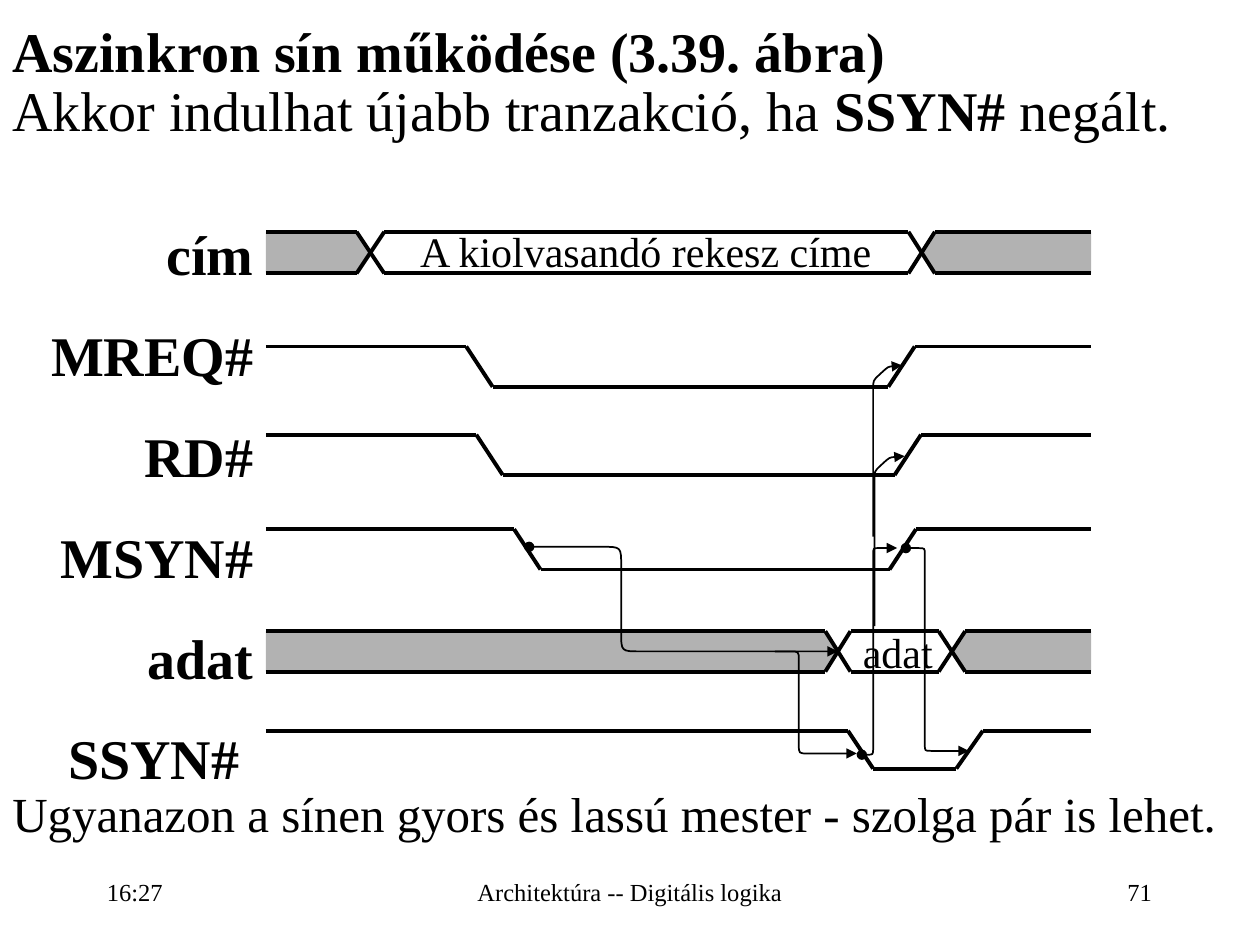
import math
import pptx
import pptx.util
import pptx.dml.color
import pptx.enum.shapes
import pptx.enum.text
import pptx.oxml
import pptx.oxml.ns

Inches, Pt = pptx.util.Inches, pptx.util.Pt
ALIGN = pptx.enum.text.PP_ALIGN
ANCHOR = pptx.enum.text.MSO_ANCHOR
BLACK = pptx.dml.color.RGBColor(0x00, 0x00, 0x00)
GREY = pptx.dml.color.RGBColor(0xB2, 0xB2, 0xB2)
FONT = "Times New Roman"

# The diagram runs between these two edges.
LEFT, RIGHT = 2.11, 8.66

# Each paragraph is a list of (text, bold) runs.
HEADING = [
    [("Aszinkron sín működése (3.39. ábra)", True)],
    [("Akkor indulhat újabb tranzakció, ha ", False), ("SSYN#", True), (" negált.", False)],
]
REMARK = [[("Ugyanazon a sínen gyors és lassú mester - szolga pár is lehet.", False)]]
SIGNALS = ["cím", "MREQ#", "RD#", "MSYN#", "adat", "SSYN# "]

# text, left, top, width, height, alignment
FOOTERS = [
    ("16:27", 0.75, 6.81, 2.07, 0.54, ALIGN.LEFT),
    ("Architektúra -- Digitális logika", 3.42, 6.83, 3.16, 0.49, ALIGN.CENTER),
    ("71", 7.17, 6.83, 2.07, 0.49, ALIGN.RIGHT),
]
# text, left, top, width
BUS_VALUES = [
    ("A kiolvasandó rekesz címe", 2.95, 1.74, 4.35),
    ("adat", 6.70, 4.92, 0.85),
]

# high level, low level, fall start, fall end, rise start, rise end
CONTROL_LINES = [
    (2.75, 3.07, 3.70, 3.91, 7.05, 7.26),
    (3.45, 3.77, 3.78, 3.99, 7.10, 7.31),
    (4.20, 4.52, 4.08, 4.29, 7.06, 7.27),
    (5.80, 6.10, 6.73, 6.93, 7.59, 7.80),
]
# high level, low level, first crossing from and to, second crossing from and to
BUSES = [
    (1.84, 2.17, 2.83, 3.05, 7.21, 7.42),
    (5.01, 5.33, 6.55, 6.75, 7.45, 7.66),
]
# starts with a dot, corner radius, corners of the route
CAUSES = [
    (True, 0.15, [(4.20, 4.34), (4.93, 4.34), (4.93, 5.17), (6.65, 5.17)]),
    (False, 0.07, [(6.15, 5.17), (6.34, 5.17), (6.34, 5.98), (6.80, 5.98)]),
    (True, 0.05, [(6.84, 5.99), (6.93, 5.99), (6.93, 4.35), (7.12, 4.35)]),
    (False, 0.07, [(6.94, 4.97), (6.94, 3.74), (7.06, 3.63), (7.18, 3.62)]),
    (False, 0.07, [(6.93, 4.26), (6.93, 3.02), (7.05, 2.91), (7.16, 2.90)]),
    (True, 0.05, [(7.19, 4.35), (7.34, 4.35), (7.34, 5.96), (7.69, 5.96)]),
]


def add_text(page, place, paragraphs, size, align=ALIGN.LEFT, anchor=ANCHOR.TOP, top_inset=0.05):
    box = page.shapes.add_textbox(*map(Inches, place))
    frame = box.text_frame
    frame.word_wrap = True
    frame.vertical_anchor = anchor
    frame.margin_top = Inches(top_inset)
    for index, runs in enumerate(paragraphs):
        para = frame.paragraphs[0] if index == 0 else frame.add_paragraph()
        para.alignment = align
        if index:
            para.line_spacing = 0.9
        for text, bold in runs:
            add_span(para, text, size, bold)
    return box


def add_span(para, text, size, bold):
    span = para.add_run()
    span.text = text
    span.font.name, span.font.size, span.font.bold = FONT, Pt(size), bold
    span.font.color.rgb = BLACK


def add_labels(page):
    box = page.shapes.add_textbox(Inches(0.17), Inches(1.43), Inches(1.94), Inches(4.9))
    box.text_frame.word_wrap = True
    para = box.text_frame.paragraphs[0]
    para.alignment = ALIGN.RIGHT
    para.line_spacing = 1.5
    for index, name in enumerate(SIGNALS):
        if index:
            para.add_line_break()
        add_span(para, name, 32, True)


def draw_trace(page, points):
    """Join consecutive points with thick straight lines."""
    for start, end in zip(points, points[1:]):
        line = page.shapes.add_connector(
            pptx.enum.shapes.MSO_CONNECTOR.STRAIGHT, *map(Inches, start + end))
        line.line.color.rgb = BLACK
        line.line.width = Pt(2.25)
        line.element.spPr.append(pptx.oxml.parse_xml(
            "<a:effectLst %s/>" % pptx.oxml.ns.nsdecls("a")))


def draw_outline(page, points, close):
    builder = page.shapes.build_freeform(*map(Inches, points[0]))
    builder.add_line_segments([tuple(map(Inches, point)) for point in points[1:]], close=close)
    shape = builder.convert_to_shape()
    shape.shadow.inherit = False
    return shape


def draw_bus(page, high, low, first, first_end, second, second_end):
    middle = (high + low) / 2
    sides = [
        (LEFT, first, (first + first_end) / 2),
        (RIGHT, second_end, (second + second_end) / 2),
    ]
    for edge, shoulder, tip in sides:
        area = draw_outline(page, [(edge, high), (edge, low), (shoulder, low),
                                   (tip, middle), (shoulder, high)], True)
        area.fill.solid()
        area.fill.fore_color.rgb = GREY
        area.line.fill.background()
    for start, end in [(high, low), (low, high)]:
        draw_trace(page, [(LEFT, start), (first, start), (first_end, end),
                          (second, end), (second_end, start), (RIGHT, start)])


def toward(start, end, distance):
    share = distance / math.dist(start, end)
    return tuple(a + (b - a) * share for a, b in zip(start, end))


def draw_cause(page, dotted, radius, corners):
    """Draw an arrow whose route turns through rounded corners."""
    points = [corners[0]]
    for before, corner, after in zip(corners, corners[1:], corners[2:]):
        entry = toward(corner, before, radius)
        points += [points[-1], entry, entry, corner, corner, toward(corner, after, radius)]
    points += [points[-1], corners[-1], corners[-1]]
    arrow = draw_outline(page, points, False)
    qn = pptx.oxml.ns.qn
    steps = list(arrow.element.iter(qn("a:lnTo")))
    for index in range(0, len(steps), 3):
        curve = steps[index]
        curve.tag = qn("a:cubicBezTo")
        for step in steps[index + 1:index + 3]:
            curve.append(step[0])
            step.getparent().remove(step)
    arrow.fill.background()
    arrow.line.color.rgb = BLACK
    arrow.line.width = Pt(1)
    ends = [("headEnd", "oval")] if dotted else []
    for tag, kind in ends + [("tailEnd", "triangle")]:
        arrow.line._get_or_add_ln().append(pptx.oxml.parse_xml(
            '<a:%s %s type="%s"/>' % (tag, pptx.oxml.ns.nsdecls("a"), kind)))


def main():
    deck = pptx.Presentation()
    deck.slide_width, deck.slide_height = Inches(10), Inches(7.5)
    page = deck.slides.add_slide(deck.slide_layouts[6])

    add_text(page, (0, 0, 10, 1.23), HEADING, 32, top_inset=0.13)
    for bus in BUSES:
        draw_bus(page, *bus)
    for high, low, fall, fall_end, rise, rise_end in CONTROL_LINES:
        draw_trace(page, [(LEFT, high), (fall, high), (fall_end, low),
                          (rise, low), (rise_end, high), (RIGHT, high)])
    for text, left, top, width in BUS_VALUES:
        add_text(page, (left, top, width, 0.5), [[(text, False)]], 24, ALIGN.CENTER)
    for cause in CAUSES:
        draw_cause(page, *cause)
    add_labels(page)
    add_text(page, (0, 6.17, 10, 0.69), REMARK, 28)
    for text, left, top, width, height, align in FOOTERS:
        add_text(page, (left, top, width, height), [[(text, False)]], 14, align, ANCHOR.MIDDLE)
    deck.save("out.pptx")


if __name__ == "__main__":
    main()
